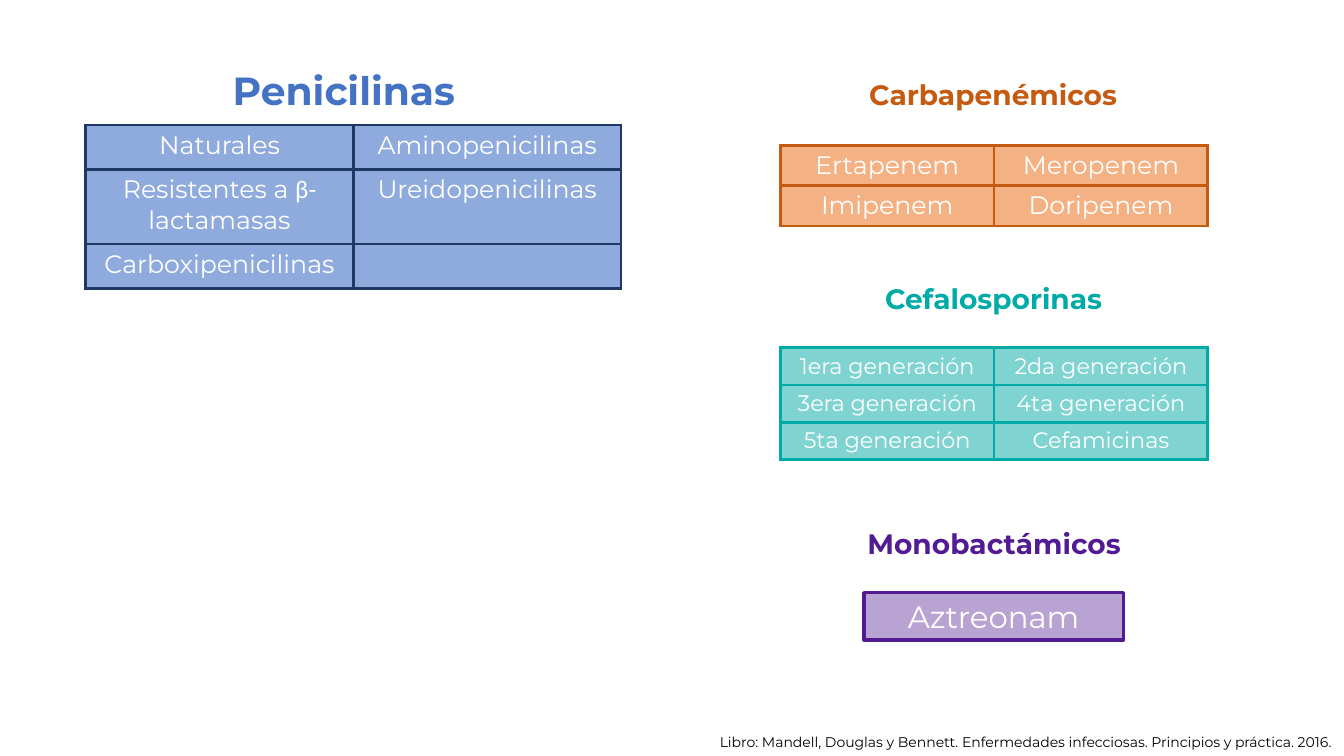
from lxml import etree
from pptx import Presentation
from pptx.dml.color import RGBColor
from pptx.enum.shapes import MSO_SHAPE
from pptx.enum.text import MSO_ANCHOR, PP_ALIGN
from pptx.oxml.ns import qn
from pptx.util import Inches, Pt

RECTANGLE = MSO_SHAPE.RECTANGLE
MIDDLE = MSO_ANCHOR.MIDDLE
LEFT, CENTER = PP_ALIGN.LEFT, PP_ALIGN.CENTER

THEME = {
    "font": "Montserrat", "greek_font": "Calibri", "line": 2.25,
    "white": "FFFFFF", "black": "000000",
    "blue": "4472C4", "navy": "203864", "light_blue": "8FAADC",
    "orange": "C55A11", "light_orange": "F4B183",
    "teal": "00AAA7", "purple": "521B93",
    "title": 28, "heading": 20, "single": 22, "cell": 18, "small_cell": 16, "source": 10,
}

HEADINGS = [
    ("Penicilinas", (2.21, 0.61, 2.4, 0.57), "title", "blue"),
    ("Carbapenémicos", (8.4, 0.72, 2.9, 0.44), "heading", "orange"),
    ("Cefalosporinas", (8.56, 2.74, 2.59, 0.44), "heading", "teal"),
    ("Monobactámicos", (8.33, 5.17, 3.06, 0.44), "heading", "purple"),
]

TABLES = [
    {"at": (0.85, 1.24), "column": 2.655, "heights": (0.44, 0.74, 0.44),
     "size": "cell", "fill": "light_blue", "border": "navy", "opacity": 100,
     "rows": [("Naturales", "Aminopenicilinas"),
              ("Resistentes a |β-|lactamasas", "Ureidopenicilinas"),
              ("Carboxipenicilinas", "")]},
    {"at": (7.74, 1.44), "column": 2.12, "heights": (0.4, 0.4),
     "size": "cell", "fill": "light_orange", "border": "orange", "opacity": 100,
     "rows": [("Ertapenem", "Meropenem"), ("Imipenem", "Doripenem")]},
    {"at": (7.74, 3.45), "column": 2.12, "heights": (0.37, 0.37, 0.37),
     "size": "small_cell", "fill": "teal", "border": "teal", "opacity": 50,
     "rows": [("1era generación", "2da generación"),
              ("3era generación", "4ta generación"),
              ("5ta generación", "Cefamicinas")]},
]

MONOBACTAM = ("Aztreonam", (8.57, 5.88, 2.57, 0.47))
SOURCE = ("Libro: Mandell, Douglas y Bennett. Enfermedades infecciosas. "
          "Principios y práctica. 2016.", (7.04, 7.23, 6.29, 0.27))


def color(name):
    return RGBColor.from_string(THEME[name])


def style_font(font, size, color_name, bold=False):
    font.name = THEME["font"]
    font.size = Pt(THEME[size])
    font.bold = bold
    font.color.rgb = color(color_name)


def set_fill(fill, properties, color_name, opacity):
    fill.solid()
    fill.fore_color.rgb = color(color_name)
    if opacity < 100:
        shade = properties.find(qn("a:solidFill")).find(qn("a:srgbClr"))
        etree.SubElement(shade, qn("a:alpha"), val=str(opacity * 1000))


def add_text(slide, text, box, size, color_name, align=CENTER, bold=False):
    frame = slide.shapes.add_textbox(*map(Inches, box)).text_frame
    frame.word_wrap = False
    frame.text = text
    paragraph = frame.paragraphs[0]
    paragraph.alignment = align
    style_font(paragraph.runs[0].font, size, color_name, bold)


def set_borders(properties, color_name):
    for index, side in enumerate(("lnL", "lnR", "lnT", "lnB")):
        line = etree.Element(qn("a:" + side), w=str(Pt(THEME["line"])))
        solid = etree.SubElement(line, qn("a:solidFill"))
        etree.SubElement(solid, qn("a:srgbClr"), val=THEME[color_name])
        properties.insert(index, line)


def fill_cell(cell, text, group):
    paragraph = cell.text_frame.paragraphs[0]
    paragraph.alignment = CENTER
    style_font(paragraph.font, group["size"], "white")
    for part in filter(None, text.split("|")):
        run = paragraph.add_run()
        run.text = part
        style_font(run.font, group["size"], "white")
        if part.startswith("β"):
            run.font.name = THEME["greek_font"]
    properties = cell._tc.get_or_add_tcPr()
    set_fill(cell.fill, properties, group["fill"], group["opacity"])
    set_borders(properties, group["border"])


def add_drug_table(slide, group):
    rows, heights = group["rows"], group["heights"]
    columns = len(rows[0])
    left, top = group["at"]
    box = (left, top, group["column"] * columns, sum(heights))
    table = slide.shapes.add_table(len(rows), columns, *map(Inches, box)).table
    table.first_row = False
    table.horz_banding = False
    for row_index, row in enumerate(rows):
        table.rows[row_index].height = Inches(heights[row_index])
        for column_index, text in enumerate(row):
            fill_cell(table.cell(row_index, column_index), text, group)


def add_monobactam(slide):
    text, box = MONOBACTAM
    shape = slide.shapes.add_shape(RECTANGLE, *map(Inches, box))
    shape.shadow.inherit = False
    set_fill(shape.fill, shape._element.spPr, "purple", 40)
    shape.line.color.rgb = color("purple")
    shape.line.width = Pt(THEME["line"])
    frame = shape.text_frame
    frame.text = text
    frame.vertical_anchor = MIDDLE
    frame.paragraphs[0].alignment = CENTER
    style_font(frame.paragraphs[0].runs[0].font, "single", "white")


def main():
    presentation = Presentation()
    presentation.slide_width = Inches(13.33)
    presentation.slide_height = Inches(7.5)
    slide = presentation.slides.add_slide(presentation.slide_layouts[6])
    for text, box, size, color_name in HEADINGS:
        add_text(slide, text, box, size, color_name, bold=True)
    add_text(slide, *SOURCE, "source", "black", align=LEFT)
    add_monobactam(slide)
    for group in TABLES:
        add_drug_table(slide, group)
    presentation.save("out.pptx")


if __name__ == "__main__":
    main()
